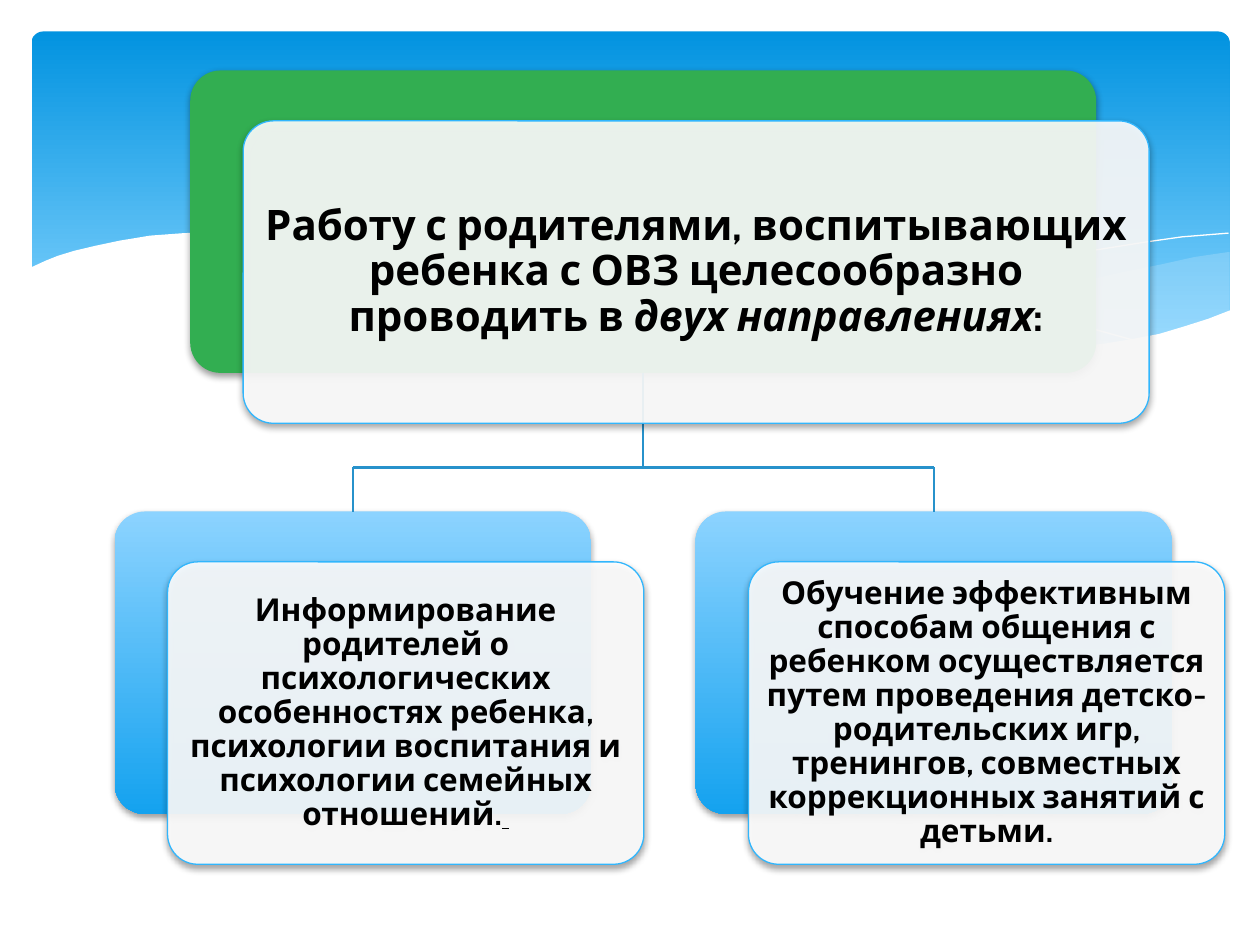
from lxml.etree import SubElement
from pptx import Presentation
from pptx.dml.color import RGBColor
from pptx.enum.shapes import MSO_CONNECTOR, MSO_SHAPE
from pptx.enum.text import MSO_ANCHOR, MSO_AUTO_SIZE, PP_ALIGN
from pptx.oxml.ns import qn
from pptx.util import Inches, Pt

COLUMNS, ROWS = 1000, 750
SLIDE_WIDTH, SLIDE_HEIGHT = Inches(10), Inches(7.5)
UNIT = SLIDE_WIDTH // COLUMNS
FONT = "Cabin"
COLORS = {
    "white": "FFFFFF", "text": "000000", "shadow": "000000",
    "sky_top": "0293E0", "sky_bottom": "83D3FE", "wave": "C6E7FC",
    "green": "32AE51", "plate_top": "8CD3FF", "plate_bottom": "14A2EF",
    "border": "31B6FD", "branch": "2792CB",
}
BLOCK_HEIGHT = 240
CARD_SHIFT = (42, 40)
ROOT_AT, ROOT_WIDTH = (151, 56), 719
CHILD_LEFTS, CHILD_TOP, CHILD_WIDTH = (91, 552), 406, 378
FORK_ROW = 371

RIGHT_WAVE = [
    (975, 200), (948, 204), (921, 210), (891, 216), (861, 223), (805, 237),
    (753, 248), (706, 257), (661, 265), (691, 269), (719, 272), (745, 275),
    (781, 277), (814, 278), (844, 277), (872, 274), (897, 270), (921, 265),
    (942, 259), (963, 252), (976, 247), (976, 200)]
MIDDLE_WAVE = [
    (893, 273), (866, 269), (807, 260), (741, 247), (668, 231), (629, 222),
    (598, 214), (569, 208), (541, 203), (514, 198), (489, 194), (442, 189),
    (399, 186), (361, 185), (328, 187), (286, 191), (323, 196), (362, 203),
    (404, 211), (449, 222), (530, 240), (584, 252), (634, 261), (680, 268),
    (722, 274), (761, 277), (807, 278), (848, 277), (876, 275)]
LEFT_CURVE = [
    (309, 195), (328, 192), (353, 189), (387, 187), (416, 187), (450, 188),
    (489, 190), (533, 194), (582, 200), (636, 208), (695, 219), (760, 233),
    (831, 251), (907, 272)]
RIGHT_CURVE = [
    (613, 257), (653, 246), (695, 235), (748, 223), (806, 210), (866, 199),
    (910, 192), (938, 188), (975, 185)]
WHITE_WAVE = [
    (977, 246), (959, 253), (940, 259), (920, 265), (899, 269), (875, 273),
    (850, 275), (823, 277), (793, 276), (761, 275), (726, 272), (688, 268),
    (648, 262), (603, 254), (555, 245), (503, 233), (447, 220), (391, 207),
    (340, 197), (292, 190), (250, 186), (211, 184), (177, 184), (146, 185),
    (119, 187), (95, 191), (76, 195), (59, 199), (46, 203), (36, 207),
    (23, 213), (23, 329), (977, 329)]


def rgb(name):
    return RGBColor.from_string(COLORS[name])


def fill_solid(shape, color, opacity=100):
    shape.fill.solid()
    shape.fill.fore_color.rgb = rgb(color)
    if opacity < 100:
        tint = shape.fill._xPr.find(qn("a:solidFill"))[0]
        SubElement(tint, qn("a:alpha"), val=str(opacity * 1000))


def fill_gradient(shape, top, bottom, end=1.0):
    shape.fill.gradient()
    shape.fill.gradient_angle = 270
    stops = shape.fill.gradient_stops
    for stop, color, position in zip(stops, (top, bottom), (0, end)):
        stop.color.rgb = rgb(color)
        stop.position = position


def cast_shadow(shape):
    effects = shape._element.spPr.find(qn("a:effectLst"))
    shadow = SubElement(effects, qn("a:outerShdw"), blurRad=str(Pt(4)),
                        dist=str(Pt(2)), dir="5400000", rotWithShape="0")
    color = SubElement(shadow, qn("a:srgbClr"), val=COLORS["shadow"])
    SubElement(color, qn("a:alpha"), val="38000")


def add_rounded(slide, left, top, width, height, rounding):
    box = slide.shapes.add_shape(
        MSO_SHAPE.ROUNDED_RECTANGLE, left * UNIT, top * UNIT, width * UNIT, height * UNIT)
    box.adjustments[0] = rounding
    box.shadow.inherit = False
    box.line.fill.background()
    return box


def add_outline(slide, points, closed):
    builder = slide.shapes.build_freeform(*points[0], scale=UNIT)
    builder.add_line_segments(points[1:], close=closed)
    outline = builder.convert_to_shape()
    outline.shadow.inherit = False
    return outline


def add_wave(slide, points, color, opacity=100):
    wave = add_outline(slide, points, True)
    fill_solid(wave, color, opacity)
    wave.line.fill.background()


def add_curve(slide, points):
    curve = add_outline(slide, points, False)
    curve.fill.background()
    curve.line.color.rgb = rgb("white")
    curve.line.width = Pt(0)


def add_backdrop(slide):
    sky = add_rounded(slide, 25, 25, 951, 270, 0.034)
    fill_gradient(sky, "sky_top", "sky_bottom", 0.9)
    add_wave(slide, RIGHT_WAVE, "wave", 29)
    add_wave(slide, MIDDLE_WAVE, "wave", 40)
    add_curve(slide, LEFT_CURVE)
    add_curve(slide, RIGHT_CURVE)
    add_wave(slide, WHITE_WAVE, "white")


def add_plate(slide, left, top, width):
    plate = add_rounded(slide, left, top, width, BLOCK_HEIGHT, 0.1)
    cast_shadow(plate)
    return plate


def add_card(slide, left, top, width):
    card = add_rounded(slide, left + CARD_SHIFT[0], top + CARD_SHIFT[1],
                       width, BLOCK_HEIGHT, 0.1)
    fill_solid(card, "white", 90)
    card.line.color.rgb = rgb("border")
    card.line.width = Pt(0.75)
    cast_shadow(card)
    return card


def add_branch(slide, start, end, parent=None, child=None):
    branch = slide.shapes.add_connector(
        MSO_CONNECTOR.STRAIGHT, *(round(value * UNIT) for value in start + end))
    branch.line.color.rgb = rgb("branch")
    branch.line.width = Pt(1.25)
    SubElement(branch._element.spPr, qn("a:effectLst"))
    if parent:
        branch.begin_connect(parent, 2)
    if child:
        branch.end_connect(child, 0)


def write(shape, runs, size, inset):
    frame = shape.text_frame
    frame.word_wrap = True
    frame.auto_size = MSO_AUTO_SIZE.NONE
    frame.vertical_anchor = MSO_ANCHOR.MIDDLE
    frame.margin_left = frame.margin_right = Inches(inset)
    frame.margin_top = frame.margin_bottom = Inches(inset)
    paragraph = frame.paragraphs[0]
    paragraph.alignment = PP_ALIGN.CENTER
    paragraph.line_spacing = 0.9
    for wording, style in runs:
        run = paragraph.add_run()
        run.text = wording
        run.font.name = FONT
        run.font.size = Pt(size)
        run.font.bold = True
        run.font.italic = style == "italic"
        run.font.underline = style == "underline"
        run.font.color.rgb = rgb("text")


def place_title(slide, runs):
    title = slide.shapes.title
    title.left, title.top = 200 * UNIT, 103 * UNIT
    title.width, title.height = 705 * UNIT, 226 * UNIT
    write(title, runs, 24, 0.1)
    slide.shapes._spTree.append(title._element)


def main():
    deck = Presentation()
    deck.slide_width, deck.slide_height = SLIDE_WIDTH, SLIDE_HEIGHT
    slide = deck.slides.add_slide(deck.slide_layouts[5])
    add_backdrop(slide)

    root = add_plate(slide, *ROOT_AT, ROOT_WIDTH)
    fill_solid(root, "green")
    directions = [add_plate(slide, left, CHILD_TOP, CHILD_WIDTH) for left in CHILD_LEFTS]
    for direction in directions:
        fill_gradient(direction, "plate_top", "plate_bottom")

    root_center = ROOT_AT[0] + ROOT_WIDTH / 2
    centers = [left + CHILD_WIDTH / 2 for left in CHILD_LEFTS]
    add_branch(slide, (root_center, ROOT_AT[1] + BLOCK_HEIGHT), (root_center, FORK_ROW), parent=root)
    add_branch(slide, (centers[0], FORK_ROW), (centers[1], FORK_ROW))
    for center, direction in zip(centers, directions):
        add_branch(slide, (center, FORK_ROW), (center, CHILD_TOP), child=direction)

    add_card(slide, *ROOT_AT, ROOT_WIDTH)
    place_title(slide, [
        ("Работу с родителями, воспитывающих ребенка с ОВЗ целесообразно проводить в ", None),
        ("двух направлениях", "italic"), (":", None)])
    descriptions = [
        [("Информирование родителей о психологических особенностях ребенка, "
          "психологии воспитания и психологии семейных отношений.", None),
         (" ", "underline")],
        [("Обучение эффективным способам общения с ребенком осуществляется "
          "путем проведения детско-родительских игр, тренингов, совместных "
          "коррекционных занятий с детьми.", None)]]
    for left, runs in zip(CHILD_LEFTS, descriptions):
        write(add_card(slide, left, CHILD_TOP, CHILD_WIDTH), runs, 18, 0.07)

    deck.save("out.pptx")


if __name__ == "__main__":
    main()
